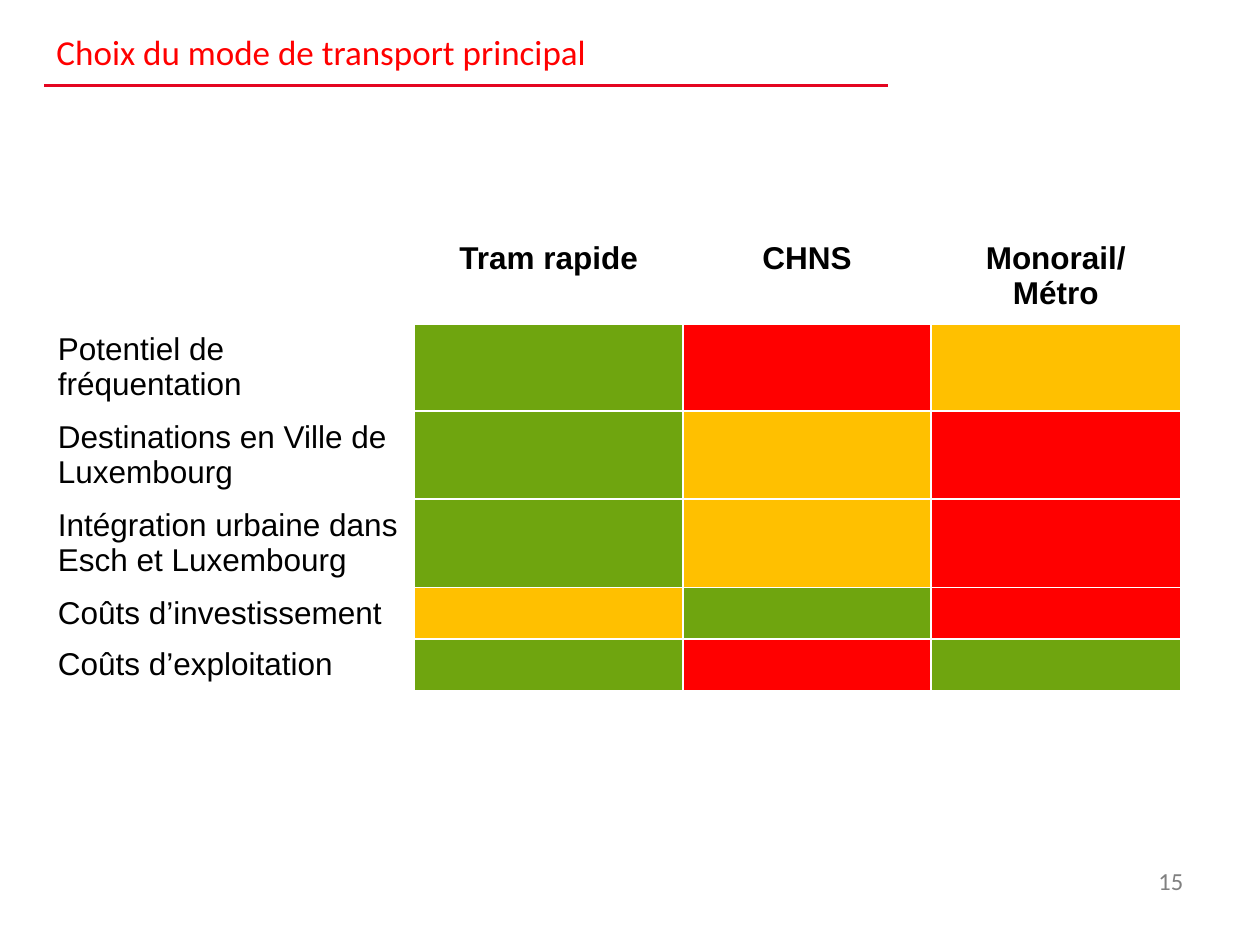
import pptx
import pptx.util
import pptx.dml.color
import pptx.enum.shapes
import pptx.enum.text
from lxml import etree
from pptx.dml.color import RGBColor
from pptx.oxml.ns import qn
from pptx.util import Inches

RED = RGBColor(0xFF, 0x00, 0x00)
GREEN = RGBColor(0x6F, 0xA5, 0x0F)
AMBER = RGBColor(0xFF, 0xC0, 0x00)
RULE_RED = RGBColor(0xE4, 0x05, 0x20)
GREY = RGBColor(0x80, 0x80, 0x80)
BLACK = RGBColor(0x00, 0x00, 0x00)
WHITE = RGBColor(0xFF, 0xFF, 0xFF)

LEFT = pptx.enum.text.PP_ALIGN.LEFT
CENTER = pptx.enum.text.PP_ALIGN.CENTER
RIGHT = pptx.enum.text.PP_ALIGN.RIGHT
TOP = pptx.enum.text.MSO_ANCHOR.TOP
MIDDLE = pptx.enum.text.MSO_ANCHOR.MIDDLE

MODES = ["Tram rapide", "CHNS", "Monorail/Métro"]
RATINGS = [
    ("Potentiel de fréquentation", GREEN, RED, AMBER),
    ("Destinations en Ville de Luxembourg", GREEN, AMBER, RED),
    ("Intégration urbaine dans Esch et Luxembourg", GREEN, AMBER, RED),
    ("Coûts d’investissement", AMBER, GREEN, RED),
    ("Coûts d’exploitation", GREEN, RED, GREEN),
]
COLUMN_WIDTHS = [2.93, 2.13, 1.97, 1.98]
ROW_HEIGHTS = [0.7, 0.66, 0.66, 0.66, 0.41, 0.41]


def write(frame, text, *, font, size, color=BLACK, bold=False, align=LEFT):
    para = frame.paragraphs[0]
    para.alignment = align
    span = para.add_run()
    span.text = text
    span.font.name = font
    span.font.size = pptx.util.Pt(size)
    span.font.bold = bold
    span.font.color.rgb = color


def set_borders(cell, color, bottom):
    """Draw 1 pt borders, with the bottom one of its own width in points."""
    properties = cell._tc.get_or_add_tcPr()
    widths = {"a:lnL": 1, "a:lnR": 1, "a:lnT": 1, "a:lnB": bottom}
    for position, (tag, width) in enumerate(widths.items()):
        line = etree.Element(qn(tag), w=str(pptx.util.Pt(width)))
        fill = etree.SubElement(line, qn("a:solidFill"))
        etree.SubElement(fill, qn("a:srgbClr"), val=str(color))
        properties.insert(position, line)


class SlideBuilder:
    heading_font = "Calibri"
    table_font = "Arial"
    table_size = 18

    def __init__(self, page):
        self.page = page

    def text(self, text, left, top, width, height, anchor=TOP, **style):
        box = self.page.shapes.add_textbox(
            Inches(left), Inches(top), Inches(width), Inches(height))
        box.text_frame.word_wrap = True
        box.text_frame.vertical_anchor = anchor
        write(box.text_frame, text, font=self.heading_font, **style)

    def rule(self, left, right, top):
        line = self.page.shapes.add_connector(
            pptx.enum.shapes.MSO_CONNECTOR.STRAIGHT,
            Inches(left), Inches(top), Inches(right), Inches(top))
        line.line.color.rgb = RULE_RED
        line.line.width = pptx.util.Pt(1.5)
        etree.SubElement(line._element.spPr, qn("a:effectLst"))

    def cell_text(self, cell, text, **style):
        write(cell.text_frame, text, font=self.table_font,
              size=self.table_size, **style)

    def rating_table(self, left, top):
        table = self.page.shapes.add_table(
            len(ROW_HEIGHTS), len(COLUMN_WIDTHS), Inches(left), Inches(top),
            Inches(sum(COLUMN_WIDTHS)), Inches(sum(ROW_HEIGHTS))).table
        for column, width in zip(table.columns, COLUMN_WIDTHS):
            column.width = Inches(width)
        for row, height in zip(table.rows, ROW_HEIGHTS):
            row.height = Inches(height)
        for cell in table.iter_cells():
            cell.fill.background()
        for column, mode in enumerate(MODES, start=1):
            self.cell_text(table.cell(0, column), mode, bold=True, align=CENTER)
        for row, (criterion, *colors) in enumerate(RATINGS, start=1):
            label = table.cell(row, 0)
            label.vertical_anchor = MIDDLE
            self.cell_text(label, criterion)
            for column, color in enumerate(colors, start=1):
                rating = table.cell(row, column)
                rating.fill.solid()
                rating.fill.fore_color.rgb = color
        for index, row in enumerate(table.rows):
            for cell in row.cells:
                set_borders(cell, WHITE, bottom=3 if index == 0 else 1)


def main():
    deck = pptx.Presentation()
    deck.slide_width = Inches(10)
    deck.slide_height = Inches(7.5)
    builder = SlideBuilder(deck.slides.add_slide(deck.slide_layouts[6]))
    builder.rule(0.35, 7.05, 0.68)
    builder.text("Choix du mode de transport principal", 0.35, 0.13, 6.77, 0.55,
                 anchor=MIDDLE, size=20, color=RED)
    builder.text("15", 8.78, 6.82, 0.71, 0.55, size=14, color=GREY, align=RIGHT)
    builder.rating_table(0.36, 1.86)
    deck.save("out.pptx")


if __name__ == "__main__":
    main()
